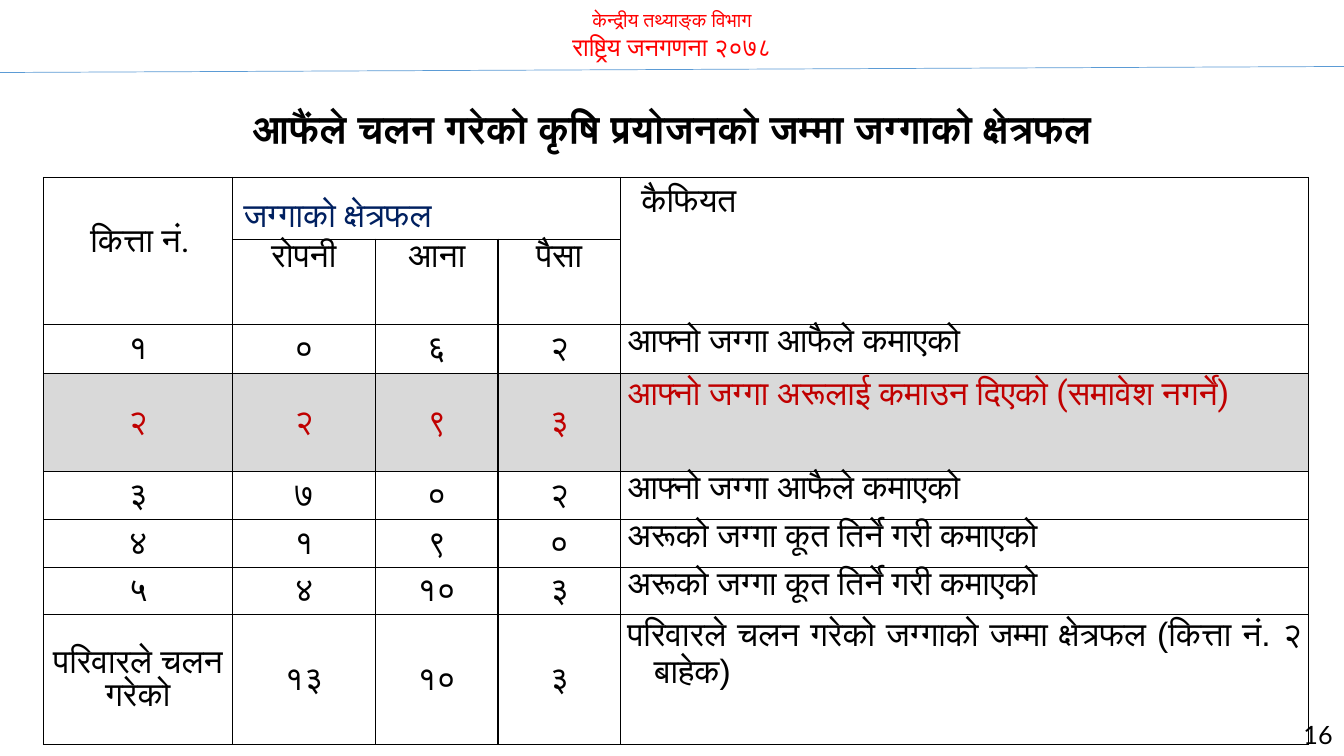
from pptx import Presentation
from pptx.dml.color import RGBColor
from pptx.enum.shapes import MSO_CONNECTOR
from pptx.enum.text import MSO_ANCHOR, PP_ALIGN
from pptx.oxml.ns import qn
from pptx.util import Pt
from lxml import etree

CENTER, RIGHT, JUSTIFY = PP_ALIGN.CENTER, PP_ALIGN.RIGHT, PP_ALIGN.JUSTIFY
TOP, MIDDLE = MSO_ANCHOR.TOP, MSO_ANCHOR.MIDDLE
STRAIGHT = MSO_CONNECTOR.STRAIGHT
BLACK = RGBColor(0x00, 0x00, 0x00)
WHITE = RGBColor(0xFF, 0xFF, 0xFF)
RED = RGBColor(0xFF, 0x00, 0x00)
DARK_RED = RGBColor(0xC0, 0x00, 0x00)
NAVY = RGBColor(0x00, 0x20, 0x60)
GREY = RGBColor(0xD9, 0xD9, 0xD9)
BLUE = RGBColor(0x5B, 0x9B, 0xD5)


def write(frame, text, size=24, font="Roboto", color=BLACK, bold=False,
          align=CENTER, spacing=None, hanging=0, new=False):
    """Put one formatted paragraph into a text frame."""
    para = frame.add_paragraph() if new else frame.paragraphs[0]
    para.alignment = align
    if spacing:
        para.line_spacing = spacing
    if hanging:
        properties = para._p.get_or_add_pPr()
        properties.set("marL", str(Pt(hanging)))
        properties.set("indent", str(-Pt(hanging)))
    span = para.add_run()
    span.text = text
    span.font.size, span.font.name = Pt(size), font
    span.font.bold, span.font.color.rgb = bold, color


def draw_borders(cell):
    """Outline a cell with thin black lines, ahead of its fill."""
    properties = cell._tc.get_or_add_tcPr()
    for position, side in enumerate(("a:lnL", "a:lnR", "a:lnT", "a:lnB")):
        line = etree.Element(qn(side), w=str(Pt(1)))
        fill = etree.SubElement(line, qn("a:solidFill"))
        etree.SubElement(fill, qn("a:srgbClr"), val=str(BLACK))
        properties.insert(position, line)


deck = Presentation()
deck.slide_width, deck.slide_height = Pt(960), Pt(540)
page = deck.slides.add_slide(deck.slide_layouts[5])

# Header and rule
header = page.shapes.add_textbox(Pt(0), Pt(2), Pt(960), Pt(46)).text_frame
header.word_wrap = True
write(header, "केन्द्रीय तथ्याङ्क विभाग", size=14, font="Calibri", color=RED)
write(header, "राष्ट्रिय जनगणना २०७८", size=18, font="Calibri", color=RED, new=True)
rule = page.shapes.add_connector(STRAIGHT, Pt(0), Pt(51.8), Pt(960), Pt(47.5))
rule.line.color.rgb, rule.line.width = BLUE, Pt(0.5)
etree.SubElement(rule._element.spPr, qn("a:effectLst"))

# Title
title = page.shapes.title
title.left, title.top, title.width, title.height = Pt(24.5), Pt(71), Pt(911), Pt(41)
title.text_frame.word_wrap = True
title.text_frame.vertical_anchor = MIDDLE
write(title.text_frame, "आफैंले चलन गरेको कृषि प्रयोजनको जम्मा जग्गाको क्षेत्रफल",
      size=28, font="Calibri", bold=True)

# Land table
column_widths = [135, 102.2, 87.5, 87.5, 491.8]
row_heights = [43.6, 60.7, 35, 70, 34.5, 34, 34, 92.5]
rows = [
    ["कित्ता नं.", "जग्गाको क्षेत्रफल", "", "", "कैफियत"],
    ["", "रोपनी", "आना", "पैसा", ""],
    ["१", "०", "६", "२", "आफ्नो जग्गा आफैले कमाएको"],
    ["२", "२", "९", "३", "आफ्नो जग्गा अरूलाई कमाउन दिएको (समावेश नगर्ने)"],
    ["३", "७", "०", "२", "आफ्नो जग्गा आफैले कमाएको"],
    ["४", "१", "९", "०", "अरूको जग्गा कूत तिर्ने गरी कमाएको"],
    ["५", "४", "१०", "३", "अरूको जग्गा कूत तिर्ने गरी कमाएको"],
    ["परिवारले चलन गरेको", "१३", "१०", "३",
     "परिवारले चलन गरेको जग्गाको जम्मा क्षेत्रफल (कित्ता नं. २ बाहेक)"],
]
EXCLUDED_ROW, REMARKS = 3, 4
table = page.shapes.add_table(len(rows), len(column_widths), Pt(31), Pt(126.7),
                              Pt(sum(column_widths)), Pt(sum(row_heights))).table
table.first_row = table.horz_banding = False
for column, width in zip(table.columns, column_widths):
    column.width = Pt(width)
for row, height in zip(table.rows, row_heights):
    row.height = Pt(height)
table.cell(0, 0).merge(table.cell(1, 0))
table.cell(0, 1).merge(table.cell(0, 3))
table.cell(0, REMARKS).merge(table.cell(1, REMARKS))

for r, texts in enumerate(rows):
    for c, text in enumerate(texts):
        cell = table.cell(r, c)
        cell.fill.solid()
        cell.fill.fore_color.rgb = GREY if r == EXCLUDED_ROW else WHITE
        draw_borders(cell)
        cell.margin_left = cell.margin_right = Pt(5)
        cell.margin_top, cell.margin_bottom = Pt(1), Pt(0)
        if not text:
            continue
        style = {"color": DARK_RED if r == EXCLUDED_ROW else BLACK}
        cell.vertical_anchor = MIDDLE
        if r == 1 or c == REMARKS:
            cell.vertical_anchor = TOP
        if c == REMARKS:
            style.update(align=JUSTIFY, hanging=19)
        if r == 0:
            cell.margin_left = Pt(8)
            if c == 0:
                cell.vertical_anchor, cell.margin_top = TOP, Pt(31)
            elif c == 1:
                style.update(align=JUSTIFY, color=NAVY, spacing=1.5)
            else:
                cell.margin_left = Pt(15)
                style.update(spacing=1.2, hanging=0)
        if r > EXCLUDED_ROW and (c == 0 or r == len(rows) - 1 and c == REMARKS):
            style["font"] = "Arial"
        write(cell.text_frame, text, **style)

# Page number
number = page.shapes.add_textbox(Pt(743), Pt(510.5), Pt(216), Pt(29)).text_frame
number.word_wrap = True
write(number, "16", size=18, font="Lato", align=RIGHT)

deck.save("out.pptx")
